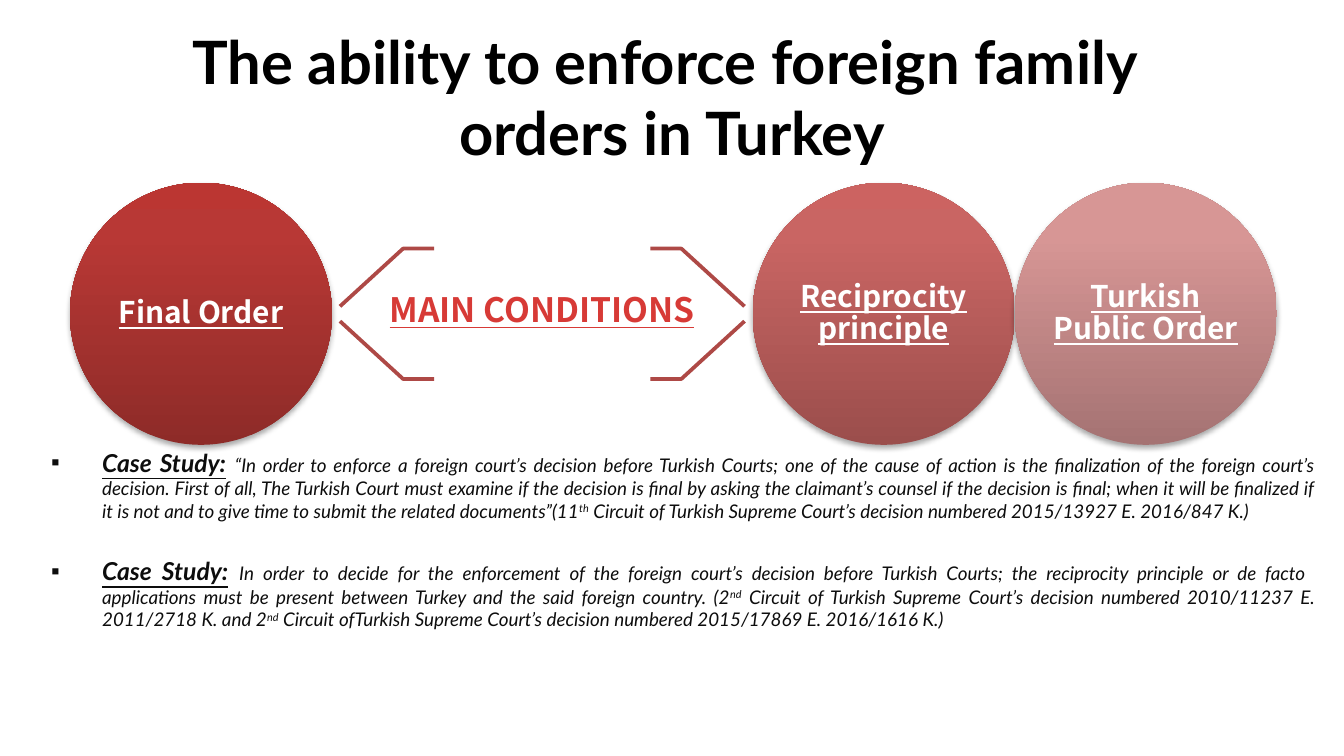
from copy import deepcopy

from lxml import etree
from pptx import Presentation
from pptx.dml.color import RGBColor
from pptx.enum.shapes import MSO_SHAPE
from pptx.enum.text import MSO_ANCHOR, MSO_AUTO_SIZE, PP_ALIGN
from pptx.oxml import parse_xml
from pptx.oxml.ns import nsdecls, qn
from pptx.util import Inches, Pt

CENTER, JUSTIFY = PP_ALIGN.CENTER, PP_ALIGN.JUSTIFY
MIDDLE, TOP = MSO_ANCHOR.MIDDLE, MSO_ANCHOR.TOP
OVAL, NO_FIT = MSO_SHAPE.OVAL, MSO_AUTO_SIZE.NONE
HEAD_FONT, DIAGRAM_FONT = "Lato", "Noto Sans CJK KR"


def rgb(color):
    return RGBColor.from_string(color)


def add_text(p, text, size, color, font=HEAD_FONT, bold=False, italic=False,
             underline=False, raised=False):
    """Add text to a paragraph; a newline becomes a line break."""
    for i, line in enumerate(text.split("\n")):
        if i:
            p.add_line_break()
        r = p.add_run()
        r.text = line
        f = r.font
        f.size, f.name, f.color.rgb = Pt(size), font, rgb(color)
        f.bold, f.italic, f.underline = bold, italic, underline
        if raised:
            r._r.get_or_add_rPr().set("baseline", "30000")


prs = Presentation()
prs.slide_width, prs.slide_height = Inches(10), Inches(10 * 9 / 16)
s = prs.slides.add_slide(prs.slide_layouts[1])

# Title
title = s.shapes.title
title.left, title.top = Inches(0.75), Inches(0.03)
title.width, title.height = Inches(8.5), Inches(1.37)
tf = title.text_frame
tf.auto_size, tf.vertical_anchor = NO_FIT, MIDDLE
p = tf.paragraphs[0]
p.alignment = CENTER
add_text(p, "The ability to enforce foreign family \norders in Turkey", 32, "000000",
         bold=True)

# Condition circles
circles = [
    (0.52, "Final Order", ["8E2B28", "B83835", "BB3632"]),
    (5.6, "Reciprocity principle", ["9B4E4C", "C96563", "CC6361"]),
    (7.55, "Turkish Public Order", ["A57373", "D79695", "D99594"]),
]
for left, label, colors in circles:
    sp = s.shapes.add_shape(OVAL, Inches(left), Inches(1.36), Inches(1.95), Inches(1.95))
    sp.line.fill.background()
    sp.fill.gradient()
    sp.fill.gradient_angle = 90
    stops = sp._element.spPr.find(".//" + qn("a:gsLst"))
    stops.append(deepcopy(stops[-1]))
    for stop, position, color in zip(sp.fill.gradient_stops, [0, 0.8, 1], colors):
        stop.position, stop.color.rgb = position, rgb(color)
    sp.shadow.inherit = False
    sp._element.spPr.find(qn("a:effectLst")).append(parse_xml(
        f'<a:outerShdw {nsdecls("a")} blurRad="{Pt(3.1)}" dist="{Pt(1.8)}" dir="5400000" '
        'rotWithShape="0"><a:srgbClr val="000000"><a:alpha val="35000"/></a:srgbClr>'
        '</a:outerShdw>'))
    tf = sp.text_frame
    tf.word_wrap, tf.vertical_anchor = True, MIDDLE
    tf.margin_left = tf.margin_right = tf.margin_top = tf.margin_bottom = 0
    p = tf.paragraphs[0]
    p.alignment, p.line_spacing = CENTER, 0.9
    add_text(p, label, 16, "FFFFFF", DIAGRAM_FONT, bold=True, underline=True)

# Brackets around the main label: tip, corner, end of the short stub
for tip_x, corner_x, stub_x in [(2.53, 3, 3.23), (5.54, 5.07, 4.84)]:
    for tip_y, corner_y in [(2.28, 1.85), (2.39, 2.82)]:
        fb = s.shapes.build_freeform(Inches(tip_x), Inches(tip_y))
        fb.add_line_segments([(Inches(corner_x), Inches(corner_y)),
                              (Inches(stub_x), Inches(corner_y))], close=False)
        sp = fb.convert_to_shape()
        sp.fill.background()
        sp.line.color.rgb, sp.line.width = rgb("AE4946"), Pt(2)
        sp.shadow.inherit = False

tf = s.shapes.add_textbox(Inches(2.8), Inches(2.1), Inches(2.49), Inches(0.4)).text_frame
tf.word_wrap = False
add_text(tf.paragraphs[0], "MAIN CONDITIONS", 18, "D73A36", DIAGRAM_FONT,
         bold=True, underline=True)

# Case studies: plain and raised pieces alternate
cases = [
    ["“In order to enforce a foreign court’s decision before Turkish Courts; one of the "
     "cause of action is the finalization of the foreign court’s decision. First of all, "
     "The Turkish Court must examine if the decision is final by asking the claimant’s "
     "counsel if the decision is final; when it will be finalized if it is not and to give "
     "time to submit the related documents”(11",
     "th",
     " Circuit of Turkish Supreme Court’s decision numbered 2015/13927 E. 2016/847 K.)"],
    ["In order to decide for the enforcement of the foreign court’s decision before Turkish "
     "Courts; the reciprocity principle or de facto \napplications must be present between "
     "Turkey and the said foreign country. (2",
     "nd",
     " Circuit of Turkish Supreme Court’s decision numbered 2010/11237 E. 2011/2718 K. and 2",
     "nd",
     " Circuit ofTurkish Supreme Court’s decision numbered 2015/17869 E. 2016/1616 K.)"],
]
body = s.placeholders[1]
body.left, body.top = Inches(0.28), Inches(3.28)
body.width, body.height = Inches(9.61), Inches(1.42)
tf = body.text_frame
tf.auto_size, tf.vertical_anchor = NO_FIT, TOP
for i, pieces in enumerate(cases):
    p = tf.add_paragraph() if i else tf.paragraphs[0]
    p.alignment, p.space_before = JUSTIFY, Pt(18 * i)
    pPr = p._p.get_or_add_pPr()
    pPr.set("marL", str(Inches(0.38)))
    pPr.set("indent", str(-Inches(0.38)))
    etree.SubElement(pPr, qn("a:buFont"), typeface="Arial")
    etree.SubElement(pPr, qn("a:buChar"), char="▪")
    add_text(p, "Case Study:", 13.2, "0D0D0D", bold=True, italic=True, underline=True)
    add_text(p, " ", 13.2, "0D0D0D")
    for j, piece in enumerate(pieces):
        add_text(p, piece, 10.1, "0D0D0D", italic=True, raised=j % 2 == 1)

prs.save("out.pptx")
